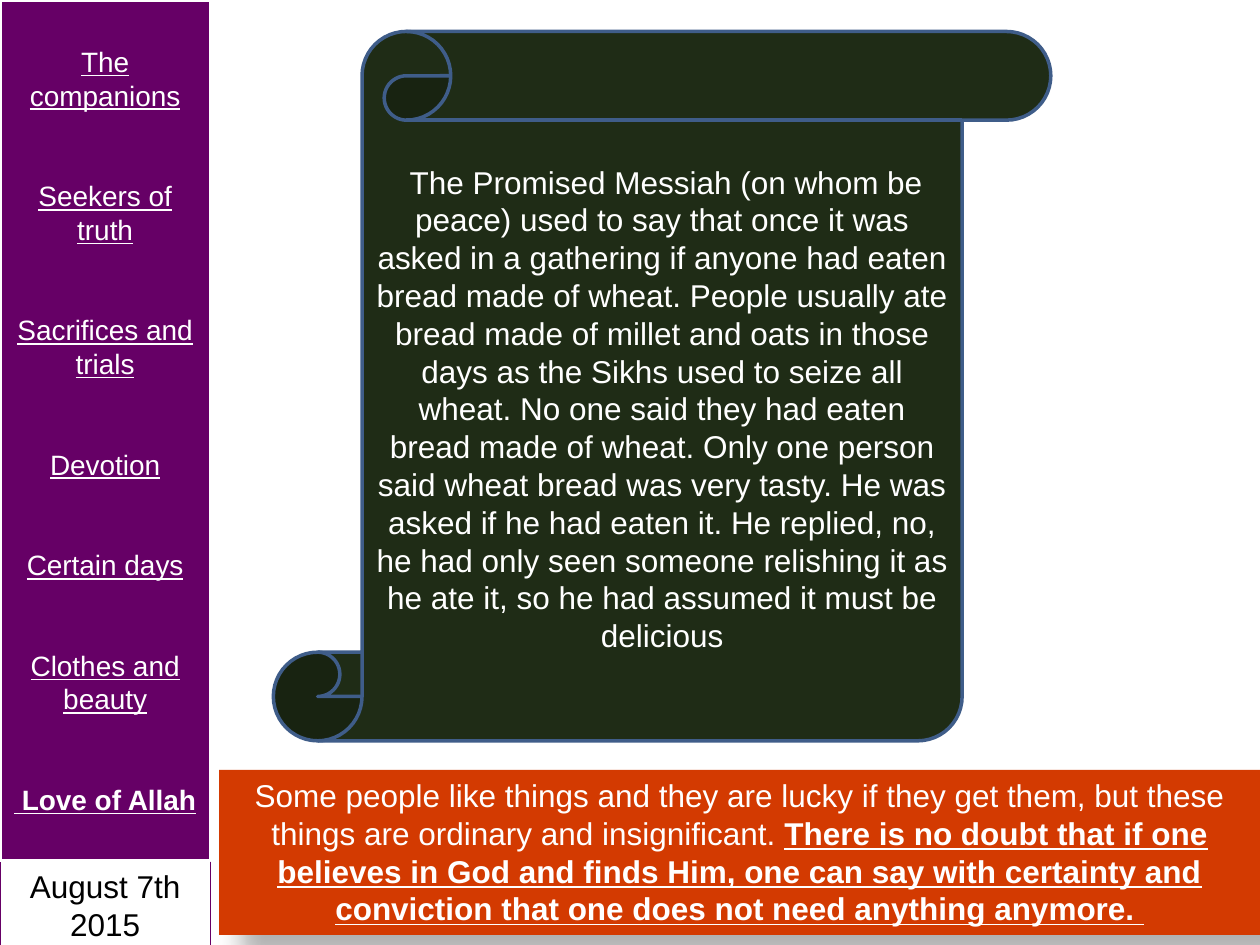
from dataclasses import dataclass
from typing import Optional

from lxml.etree import SubElement
from pptx import Presentation
from pptx.dml.color import RGBColor
from pptx.enum.shapes import MSO_SHAPE
from pptx.enum.text import MSO_ANCHOR, MSO_AUTO_SIZE, PP_ALIGN
from pptx.oxml.ns import qn
from pptx.util import Inches, Pt

BOLD_UNDERLINE = {"bold": True, "underline": True}
UNDERLINE = {"underline": True}


@dataclass
class Words:
    text: str
    style: dict


@dataclass
class Panel:
    left: float
    top: float
    width: float
    height: float
    paragraphs: list[list[Words]]
    outline: MSO_SHAPE = MSO_SHAPE.RECTANGLE
    fill: Optional[str] = None
    line: Optional[str] = None
    line_width: float = 2
    size: int = 18
    color: str = "FFFFFF"
    gap: float = 0
    middle: bool = False
    shadow: bool = False


def rgb(value: str) -> RGBColor:
    return RGBColor.from_string(value)


def add_shadow(shape) -> None:
    effects = shape._element.spPr.find(qn("a:effectLst"))
    outer = SubElement(effects, qn("a:outerShdw"), blurRad=str(Pt(15)),
                       dist=str(Pt(18)), dir=str(45 * 60000),
                       algn="tl", rotWithShape="0")
    tint = SubElement(outer, qn("a:srgbClr"), val="000000")
    SubElement(tint, qn("a:alpha"), val="30000")


def draw_panel(slide, panel: Panel) -> None:
    shape = slide.shapes.add_shape(
        panel.outline, Inches(panel.left), Inches(panel.top),
        Inches(panel.width), Inches(panel.height))
    shape.shadow.inherit = False
    if panel.shadow:
        add_shadow(shape)
    if panel.fill:
        shape.fill.solid()
        shape.fill.fore_color.rgb = rgb(panel.fill)
    else:
        shape.fill.background()
    if panel.line:
        shape.line.color.rgb = rgb(panel.line)
        shape.line.width = Pt(panel.line_width)
    else:
        shape.line.fill.background()

    frame = shape.text_frame
    frame_format = {
        "word_wrap": True,
        "vertical_anchor": MSO_ANCHOR.MIDDLE if panel.middle else MSO_ANCHOR.TOP,
        "auto_size": MSO_AUTO_SIZE.NONE if panel.middle
        else MSO_AUTO_SIZE.SHAPE_TO_FIT_TEXT,
    }
    for name, value in frame_format.items():
        setattr(frame, name, value)
    for index, passage in enumerate(panel.paragraphs):
        paragraph = frame.add_paragraph() if index else frame.paragraphs[0]
        paragraph.alignment = PP_ALIGN.CENTER
        if index:
            paragraph.space_before = Pt(panel.gap)
        for words in passage:
            run = paragraph.add_run()
            run.text = words.text
            run.font.color.rgb = rgb(panel.color)
            font_format = {"name": "Arial", "size": Pt(panel.size), **words.style}
            for name, value in font_format.items():
                setattr(run.font, name, value)


SIDEBAR_WIDTH = 1.67
SIDEBAR_HEIGHT = 6.83

TOPICS = ["The companions", "Seekers of truth", "Sacrifices and trials",
          "Devotion", "Certain days", "Clothes and beauty"]

STORY = (
    " The Promised Messiah (on whom be peace) used to say that once it was "
    "asked in a gathering if anyone had eaten bread made of wheat. People "
    "usually ate bread made of millet and oats in those days as the Sikhs used "
    "to seize all wheat. No one said they had eaten bread made of wheat. Only "
    "one person said wheat bread was very tasty. He was asked if he had eaten "
    "it. He replied, no, he had only seen someone relishing it as he ate it, "
    "so he had assumed it must be delicious")

LESSON = (
    "Some people like things and they are lucky if they get them, but these "
    "things are ordinary and insignificant. ")
CONCLUSION = (
    "There is no doubt that if one believes in God and finds Him, one can say "
    "with certainty and conviction that one does not need anything anymore. ")

PANELS = [
    Panel(1.74, 6.11, 8.26, 1.31,
          [[Words(LESSON, {}), Words(CONCLUSION, BOLD_UNDERLINE)]],
          fill="D33A01", shadow=True),
    Panel(2.17, 0.25, 6.17, 5.63, [[Words(STORY, {})]],
          outline=MSO_SHAPE.VERTICAL_SCROLL, fill="1F2C16", line="3F5D89",
          middle=True),
    Panel(0, SIDEBAR_HEIGHT, SIDEBAR_WIDTH, 0.71,
          [[Words("August 7th 2015", {})]],
          line="660066", line_width=0.75, color="000000"),
    Panel(0, 0, SIDEBAR_WIDTH, SIDEBAR_HEIGHT,
          [[Words(topic, UNDERLINE)] for topic in TOPICS]
          + [[Words(" ", UNDERLINE), Words("Love of Allah", BOLD_UNDERLINE)]],
          fill="660066", line="FFFFFF", size=16, gap=38.3, middle=True),
]


def main() -> None:
    presentation = Presentation()
    presentation.slide_width = Inches(10)
    presentation.slide_height = Inches(7.5)
    slide = presentation.slides.add_slide(presentation.slide_layouts[6])
    for panel in PANELS:
        draw_panel(slide, panel)
    presentation.save("out.pptx")


if __name__ == "__main__":
    main()
